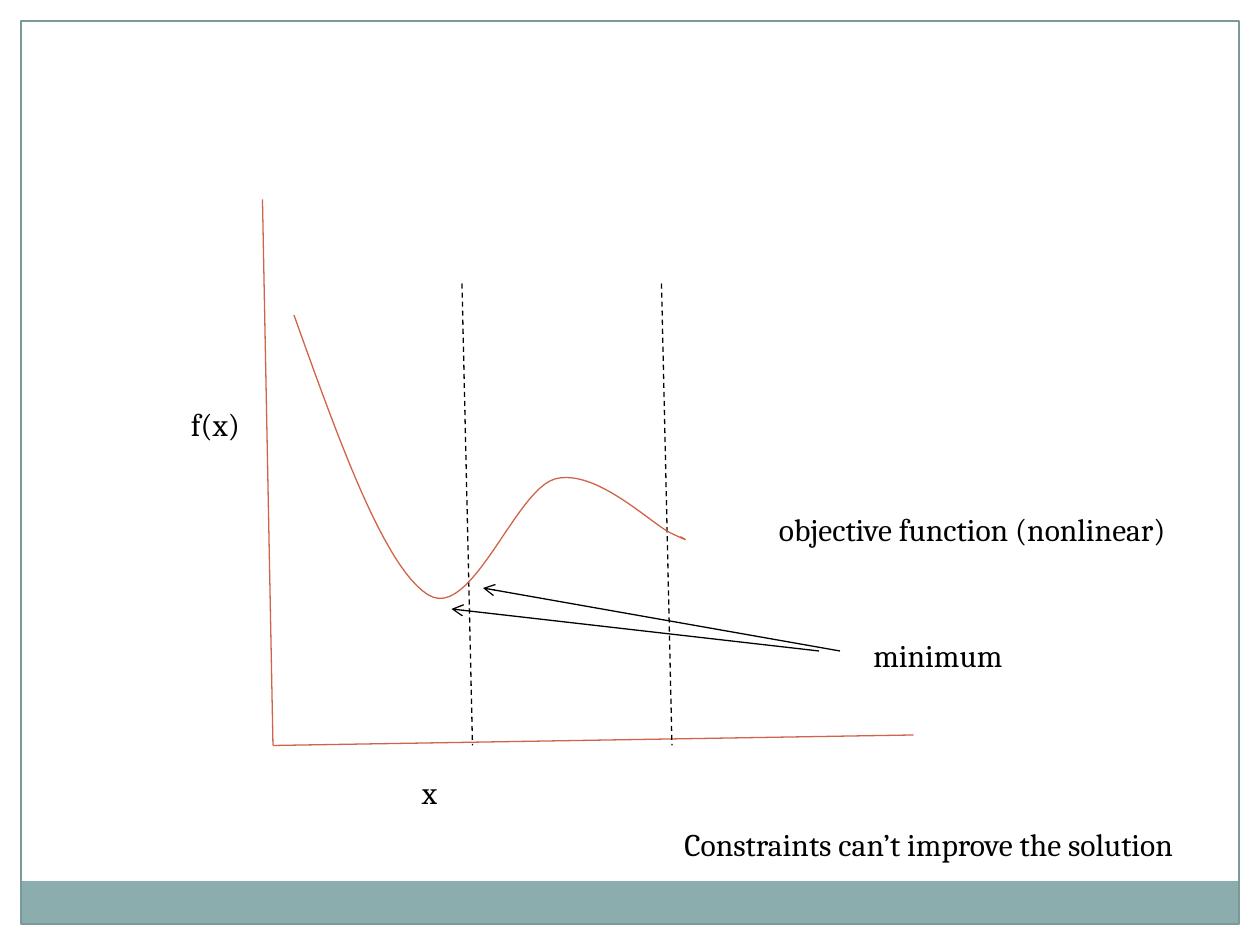
from dataclasses import dataclass

from lxml.etree import SubElement
from pptx import Presentation
from pptx.dml.color import RGBColor
from pptx.enum.dml import MSO_LINE
from pptx.enum.shapes import MSO_CONNECTOR, MSO_SHAPE
from pptx.enum.text import MSO_AUTO_SIZE
from pptx.oxml.ns import qn
from pptx.util import Pt


@dataclass(frozen=True)
class Theme:
    font: str = "Cambria"
    size: float = 18
    line: float = 0.75
    ink: RGBColor = RGBColor(0, 0, 0)
    paper: RGBColor = RGBColor(0xFF, 0xFF, 0xFF)
    band: RGBColor = RGBColor(0x8C, 0xAD, 0xAE)
    border: RGBColor = RGBColor(0x7C, 0x99, 0x9A)
    accent: RGBColor = RGBColor(0xD1, 0x63, 0x49)


THEME = Theme()
WIDTH, HEIGHT = 720, 540

# Plot geometry in points, relative to the plot's top left corner
AXES = [((0, 0), (6, 312)), ((6, 312), (372, 306))]
CONSTRAINTS = [((114, 48), (120, 312)), ((228, 48), (234, 312))]
MINIMUM_ARROWS = [((318, 258), (108, 234)), ((330, 258), (126, 222))]
CURVE_START = (18, 66)
CURVE = [
    ((43.7, 138), (69.6, 210), (94.5, 225.8)),
    ((119.3, 241.7), (144.5, 165.4), (167.5, 159.6)),
    ((190.6, 153.8), (221.5, 184.8), (233.3, 190.6)),
    ((245.3, 196.3), (241.7, 194.2), (238.8, 192.7)),
]
LABELS = [
    ("f(x)", -48, 114, 43),
    ("x", 84, 324, 24),
    ("objective function (nonlinear)", 288, 174, 254),
    ("minimum", 342, 246, 94),
]


def add_rect(slide, x, y, w, h, fill=None, line=None):
    sp = slide.shapes.add_shape(MSO_SHAPE.RECTANGLE, Pt(x), Pt(y), Pt(w), Pt(h))
    sp.shadow.inherit = False
    if fill is None:
        sp.fill.background()
    else:
        sp.fill.solid()
        sp.fill.fore_color.rgb = fill
    if line is None:
        sp.line.fill.background()
    else:
        sp.line.color.rgb = line
        sp.line.width = Pt(THEME.line)


def add_line(slide, x, y, start, end, color, dash=None, arrow=False):
    """Draw a line whose ends are relative to (x, y)."""
    (x1, y1), (x2, y2) = start, end
    cxn = slide.shapes.add_connector(
        MSO_CONNECTOR.STRAIGHT, Pt(x + x1), Pt(y + y1), Pt(x + x2), Pt(y + y2))
    cxn.line.color.rgb = color
    cxn.line.width = Pt(THEME.line)
    if dash is not None:
        cxn.line.dash_style = dash
    if arrow:
        SubElement(cxn.line._get_or_add_ln(), qn("a:tailEnd"), type="arrow")
    SubElement(cxn._element.spPr, qn("a:effectLst"))


def add_label(slide, text, x, y, w, h=29):
    box = slide.shapes.add_textbox(Pt(x), Pt(y), Pt(w), Pt(h))
    tf = box.text_frame
    tf.word_wrap = False
    tf.auto_size = MSO_AUTO_SIZE.SHAPE_TO_FIT_TEXT
    r = tf.paragraphs[0].add_run()
    r.text = text
    r.font.name = THEME.font
    r.font.size = Pt(THEME.size)
    r.font.color.rgb = THEME.ink


def bezier_points(start, segments, steps=24):
    """Sample a chain of cubic Bezier segments, leaving out the start."""
    points = []
    for c1, c2, end in segments:
        for i in range(1, steps + 1):
            t = i / steps
            u = 1 - t
            points.append(tuple(
                u**3 * a + 3 * u * u * t * b + 3 * u * t * t * c + t**3 * d
                for a, b, c, d in zip(start, c1, c2, end)))
        start = end
    return points


def add_curve(slide, x, y):
    x0, y0 = CURVE_START
    fb = slide.shapes.build_freeform(Pt(x + x0), Pt(y + y0))
    fb.add_line_segments(
        [(Pt(x + px), Pt(y + py)) for px, py in bezier_points(CURVE_START, CURVE)],
        close=False)
    sp = fb.convert_to_shape()
    sp.shadow.inherit = False
    sp.fill.background()
    sp.line.color.rgb = THEME.accent
    sp.line.width = Pt(THEME.line)


def add_frame(slide, x, y, w, h, margin=12, band_h=24.5):
    """Draw white margins, the footer band and the thin border."""
    inner_w, inner_h = w - 2 * margin, h - 2 * margin
    add_rect(slide, x, y, w, margin, THEME.paper)
    for side_x in (x + w - margin, x):
        add_rect(slide, side_x, y, margin, h, THEME.paper)
    add_rect(slide, x + margin, y + h - margin - band_h, inner_w, band_h, THEME.band)
    add_rect(slide, x + margin, y + margin, inner_w, inner_h, line=THEME.border)


def add_plot(slide, x, y):
    for start, end in AXES:
        add_line(slide, x, y, start, end, THEME.accent)
    for start, end in CONSTRAINTS:
        add_line(slide, x, y, start, end, THEME.ink, dash=MSO_LINE.DASH)
    add_curve(slide, x, y)
    for start, end in MINIMUM_ARROWS:
        add_line(slide, x, y, start, end, THEME.ink, arrow=True)
    for text, dx, dy, w in LABELS:
        add_label(slide, text, x + dx, y + dy, w)


def main():
    prs = Presentation()
    prs.slide_width, prs.slide_height = Pt(WIDTH), Pt(HEIGHT)
    slide = prs.slides.add_slide(prs.slide_layouts[6])
    add_frame(slide, 0, 0, WIDTH, HEIGHT)
    add_plot(slide, 150, 114)
    add_label(slide, "Constraints can’t improve the solution", 384, 468, 322)
    prs.save("out.pptx")


if __name__ == "__main__":
    main()
